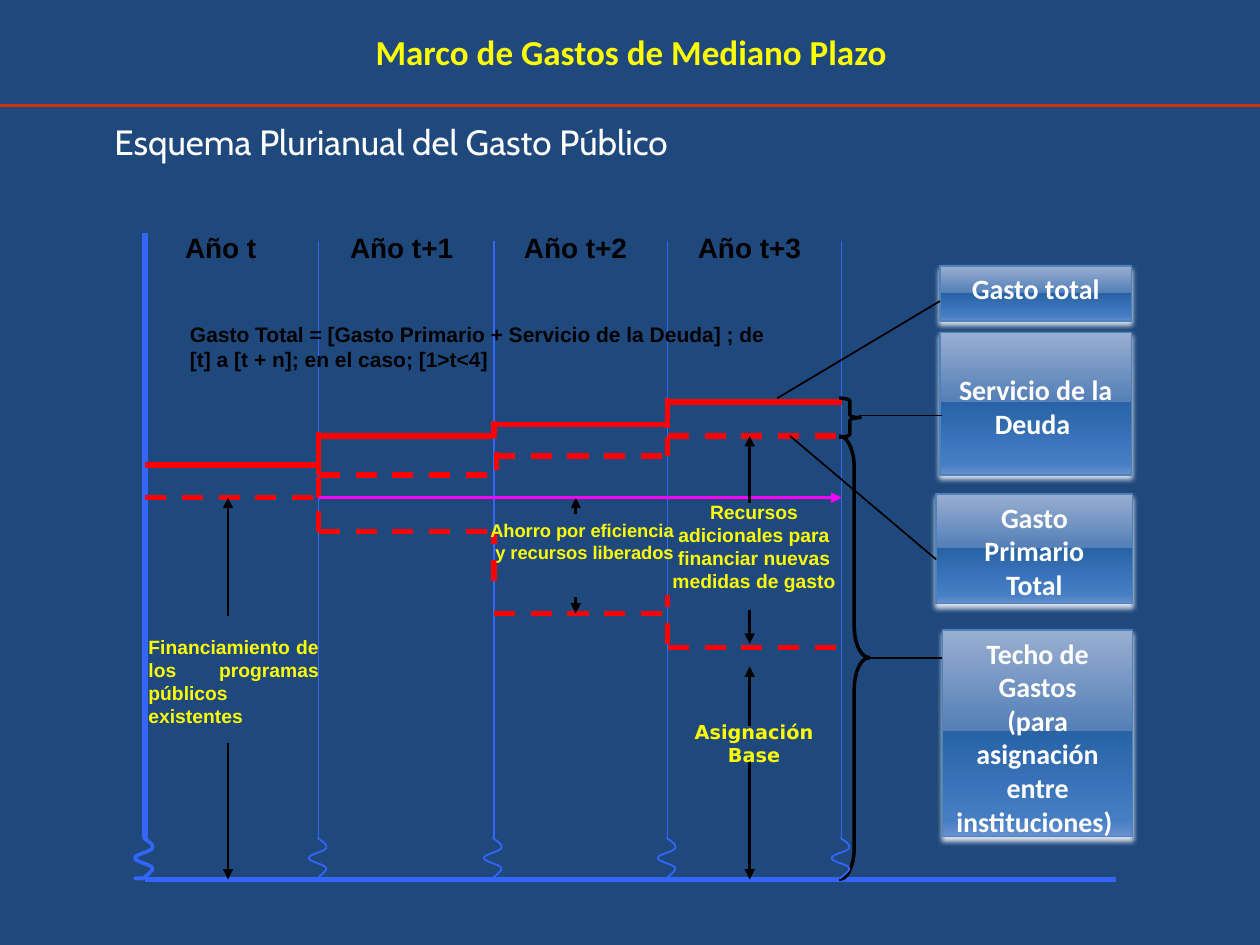
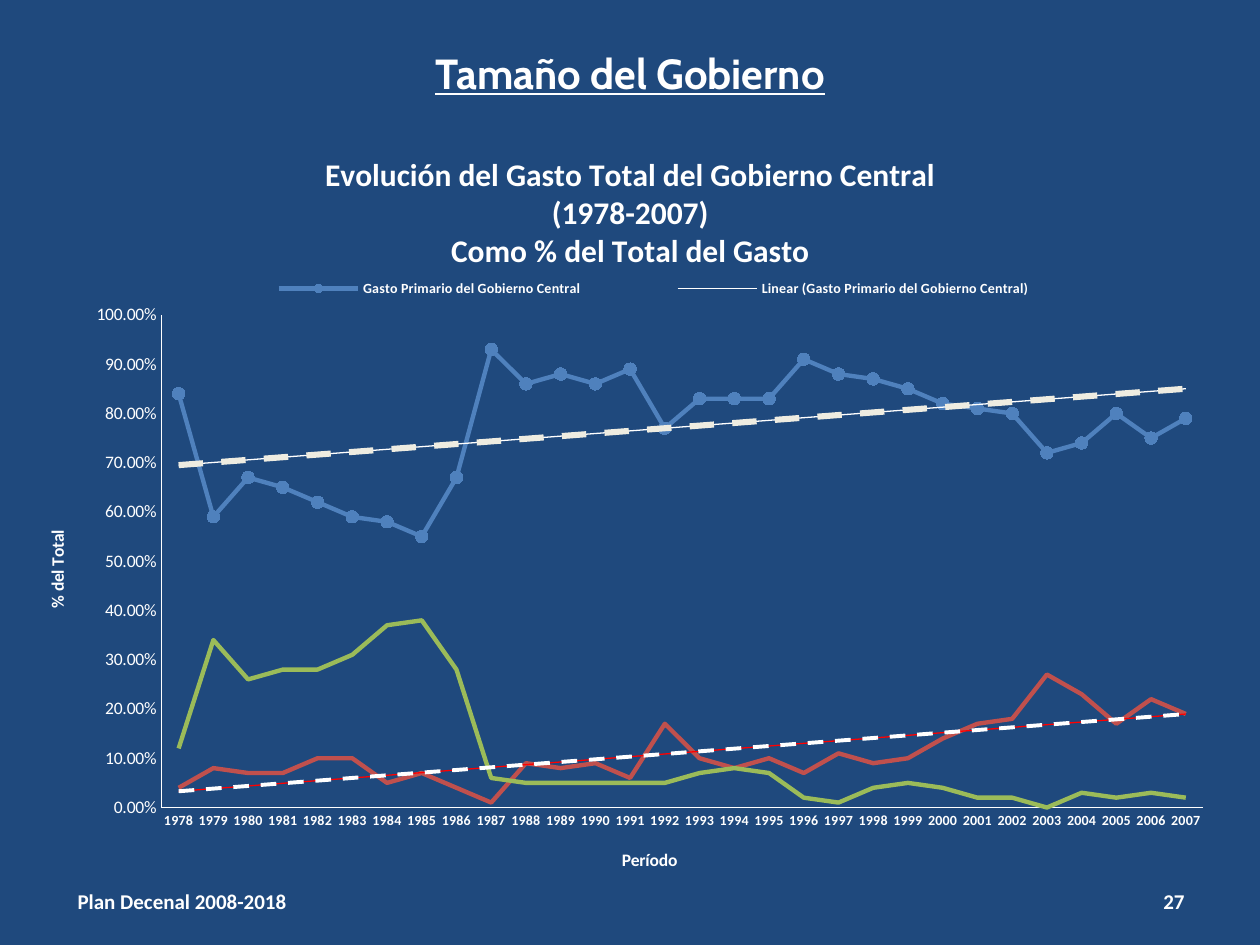
"""Build two slides on multi-year public spending and the size of government."""
from dataclasses import dataclass

from pptx import Presentation
from pptx.chart.data import CategoryChartData
from pptx.dml.color import RGBColor
from pptx.enum.chart import XL_CHART_TYPE as ChartType, XL_LEGEND_POSITION as LegendPosition
from pptx.enum.chart import XL_MARKER_STYLE as Marker, XL_TICK_MARK as TickMark
from pptx.enum.dml import MSO_LINE as Dash
from pptx.enum.shapes import MSO_CONNECTOR as Connector, MSO_SHAPE as Shape
from pptx.enum.text import MSO_ANCHOR as Anchor, PP_ALIGN as Align
from pptx.oxml import parse_xml
from pptx.oxml.ns import nsdecls, qn
from pptx.util import Pt

PX = 9144


@dataclass(frozen=True)
class Theme:
    background: str = "1F497D"
    white: str = "FFFFFF"
    black: str = "000000"
    yellow: str = "FFFF00"
    rule: str = "CC3300"
    frame: str = "3366FF"
    spending: str = "FF0000"
    base_level: str = "FF00FF"
    box_line: str = "4F81BD"
    box_shadow: str = "FFFFFF"
    trend_dash: str = "EEECE1"
    box_gradient: tuple = ((0, "99AED1"), (49, "547FB7"), (49, "2862A7"),
                           (92, "467EC4"), (100, "6690CE"))
    series: tuple = ("4F81BD", "C0504D", "9BBB59")
    body: str = "Calibri"
    display: str = "Cabin"
    diagram: str = "Arial"
    accent: str = "DejaVu Sans"
    heading_size: float = 24
    title_size: float = 20
    chart_title_size: float = 18
    label_size: float = 16
    footer_size: float = 12
    note_size: float = 11
    small_note_size: float = 10.5
    axis_size: float = 10
    tick_size: float = 8


def set_layout(parent, chart_box, x, y, width=None, height=None, inner=False):
    for layout in parent.findall(qn("c:layout")):
        parent.remove(layout)
    left, top, chart_width, chart_height = chart_box
    target = '<c:layoutTarget val="inner"/>' if inner else ""
    size = (f'<c:w val="{width / chart_width}"/><c:h val="{height / chart_height}"/>'
            if width else "")
    layout = parse_xml(
        f'<c:layout {nsdecls("c")}><c:manualLayout>{target}<c:xMode val="edge"/>'
        f'<c:yMode val="edge"/><c:x val="{(x - left) / chart_width}"/>'
        f'<c:y val="{(y - top) / chart_height}"/>{size}</c:manualLayout></c:layout>')
    overlay = parent.find(qn("c:overlay"))
    if overlay is None:
        parent.insert(0, layout)
    else:
        overlay.addprevious(layout)


class Deck:
    def __init__(self, theme):
        self.theme = theme
        self.presentation = Presentation()
        self.presentation.slide_width = 1000 * PX
        self.presentation.slide_height = 750 * PX
        self.slide = None

    def add_slide(self):
        self.slide = self.presentation.slides.add_slide(self.presentation.slide_layouts[6])
        fill = self.slide.background.fill
        fill.solid()
        fill.fore_color.rgb = RGBColor.from_string(self.theme.background)

    def style_font(self, font, size, color=None, name=None, bold=True):
        font.size = Pt(size)
        font.name = name or self.theme.body
        font.bold = bold
        font.color.rgb = RGBColor.from_string(color or self.theme.white)

    def fill_frame(self, frame, text, size, color, name, bold, align):
        frame.word_wrap = True
        frame.text = text
        for paragraph in frame.paragraphs:
            paragraph.alignment = align
            self.style_font(paragraph.font, size, color, name, bold)

    def text(self, box, text, size, color=None, name=None, bold=True,
             align=Align.CENTER, anchor=Anchor.TOP):
        shape = self.slide.shapes.add_textbox(*(value * PX for value in box))
        shape.text_frame.vertical_anchor = anchor
        self.fill_frame(shape.text_frame, text, size, color, name, bold, align)
        return shape

    def title(self, box, text, size, color, name, underline=False):
        shape = self.text(box, text, size, color, name, anchor=Anchor.MIDDLE)
        if underline:
            shape.text_frame.paragraphs[0].font.underline = True

    def line(self, start, end, color, width, dashed=False, arrow=False):
        points = (value * PX for value in (*start, *end))
        connector = self.slide.shapes.add_connector(Connector.STRAIGHT, *points)
        connector.line.color.rgb = RGBColor.from_string(color)
        connector.line.width = Pt(width)
        if dashed:
            connector.line.dash_style = Dash.DASH
        if arrow:
            connector.line._get_or_add_ln().append(
                parse_xml(f'<a:tailEnd {nsdecls("a")} type="triangle"/>'))
        connector._element.spPr.append(parse_xml(f'<a:effectLst {nsdecls("a")}/>'))

    def outline(self, shape, color, width):
        shape.shadow.inherit = False
        shape.fill.background()
        shape.line.color.rgb = RGBColor.from_string(color)
        shape.line.width = Pt(width)

    def label_box(self, box, text, top_inset=5):
        shape = self.slide.shapes.add_shape(Shape.RECTANGLE, *(value * PX for value in box))
        self.outline(shape, self.theme.box_line, 0.9)
        stops = "".join(f'<a:gs pos="{position * 1000}"><a:srgbClr val="{color}"/></a:gs>'
                        for position, color in self.theme.box_gradient)
        properties = shape._element.spPr
        properties.replace(properties.find(qn("a:noFill")), parse_xml(
            f'<a:gradFill {nsdecls("a")} rotWithShape="1"><a:gsLst>{stops}</a:gsLst>'
            '<a:lin ang="5400000" scaled="0"/></a:gradFill>'))
        properties.find(qn("a:effectLst")).append(parse_xml(
            f'<a:outerShdw {nsdecls("a")} blurRad="{Pt(3.1)}" dist="{Pt(2)}" dir="5400000" '
            f'rotWithShape="0"><a:srgbClr val="{self.theme.box_shadow}">'
            '<a:alpha val="83000"/></a:srgbClr></a:outerShdw>'))
        shape.text_frame.vertical_anchor = Anchor.TOP
        shape.text_frame.margin_top = top_inset * PX
        self.fill_frame(shape.text_frame, text, self.theme.label_size, None, None, True,
                        Align.CENTER)

    def brace(self, box, curve):
        shape = self.slide.shapes.add_shape(Shape.RIGHT_BRACE, *(value * PX for value in box))
        shape.adjustments[0] = curve
        self.outline(shape, self.theme.black, 2)

    def axis_break(self, x, y, width):
        offsets = ((4, 3), (8, 5), (7, 8), (6, 11), (-7, 13), (-7, 16),
                   (-7, 19), (6, 21), (7, 24), (8, 26), (2, 30), (0, 32),
                   (-2, 33), (-7, 32), (-7, 32), (-7, 32), (-1, 32), (0, 32))
        builder = self.slide.shapes.build_freeform(x, y, scale=PX)
        builder.add_line_segments([(x + dx, y + dy) for dx, dy in offsets], close=False)
        shape = builder.convert_to_shape()
        segments = list(shape._element.iter(qn("a:lnTo")))
        for first in range(0, len(segments), 3):
            curve = parse_xml(f'<a:cubicBezTo {nsdecls("a")}/>')
            segments[first].addprevious(curve)
            for segment in segments[first:first + 3]:
                curve.append(segment[0])
                segment.getparent().remove(segment)
        self.outline(shape, self.theme.frame, width)

    def trend(self, series, color, width, dash="solid"):
        series._element.find(qn("c:cat")).addprevious(parse_xml(
            f'<c:trendline {nsdecls("c", "a")}><c:spPr><a:ln w="{Pt(width)}"><a:solidFill>'
            f'<a:srgbClr val="{color}"/></a:solidFill><a:prstDash val="{dash}"/></a:ln></c:spPr>'
            '<c:trendlineType val="linear"/><c:dispRSqr val="0"/><c:dispEq val="0"/>'
            '</c:trendline>'))

    def axis(self, axis, title, size, bold, line_width):
        axis.has_major_gridlines = False
        axis.major_tick_mark = axis.minor_tick_mark = TickMark.NONE
        axis.format.line.color.rgb = RGBColor.from_string(self.theme.white)
        axis.format.line.width = Pt(line_width)
        self.style_font(axis.tick_labels.font, size, bold=bold)
        frame = axis.axis_title.text_frame
        frame.text = title
        self.style_font(frame.paragraphs[0].font, self.theme.axis_size)
        return frame

    def line_chart(self, box, title, categories, values, category_title, value_title):
        theme = self.theme
        data = CategoryChartData(number_format="0.00%")
        data.categories = categories
        for name, numbers in values.items():
            data.add_series(name, numbers)
        chart = self.slide.shapes.add_chart(
            ChartType.LINE_MARKERS, *(value * PX for value in box), data).chart
        self.style_font(chart.font, theme.axis_size, theme.black, bold=False)
        chart.plots[0].vary_by_categories = False
        for series, color in zip(chart.series, theme.series):
            series.smooth = False
            series.format.line.color.rgb = RGBColor.from_string(color)
            series.format.line.width = Pt(2.5)
            series.marker.style = Marker.NONE
        primary, debt, _ = chart.series
        marker = primary.marker
        marker.style = Marker.CIRCLE
        marker.size = 7
        marker.format.fill.solid()
        for color in (marker.format.fill.fore_color, marker.format.line.color):
            color.rgb = RGBColor.from_string(theme.series[0])
        self.trend(primary, theme.white, 0.75)
        self.trend(primary, theme.trend_dash, 3.5, "dash")
        self.trend(debt, theme.spending, 0.75)
        self.trend(debt, theme.white, 2.25, "dash")

        frame = chart.chart_title.text_frame
        frame.text = title
        for paragraph in frame.paragraphs:
            paragraph.alignment = Align.CENTER
            self.style_font(paragraph.font, theme.chart_title_size)
        self.axis(chart.category_axis, category_title, theme.tick_size, True, 1)
        frame = self.axis(chart.value_axis, value_title, theme.axis_size, False, 0.75)
        frame._txBody.bodyPr.set("rot", "-5400000")
        frame._txBody.bodyPr.set("vert", "horz")
        chart.value_axis.minimum_scale = 0
        chart.value_axis.maximum_scale = 1
        chart.value_axis.major_unit = 0.1
        chart.value_axis.tick_labels.number_format = "0.00%"
        chart.value_axis.tick_labels.number_format_is_linked = False

        chart.has_legend = True
        chart.legend.position = LegendPosition.TOP
        chart.legend.include_in_layout = False
        self.style_font(chart.legend.font, theme.tick_size)
        legend = chart.legend._element
        set_layout(chart.chart_title._element, box, 255, 119)
        set_layout(chart.category_axis.axis_title._element, box, 491, 671)
        set_layout(chart.value_axis.axis_title._element, box, 34, 418)
        set_layout(legend, box, 187, 218, 664, 22)
        set_layout(chart._chartSpace.chart.plotArea, box, 128, 250, 827, 391, inner=True)
        for index in (1, 2, 4, 5, 6):
            legend.find(qn("c:layout")).addprevious(parse_xml(
                f'<c:legendEntry {nsdecls("c")}><c:idx val="{index}"/>'
                '<c:delete val="1"/></c:legendEntry>'))


def spending_framework(deck):
    theme = deck.theme
    deck.add_slide()
    deck.title((51, 13, 900, 55), "Marco de Gastos de Mediano Plazo",
               theme.title_size, theme.yellow, theme.body)
    deck.line((0, 84), (1000, 84), theme.rule, 1.5)
    deck.text((35, 91, 551, 47), "Esquema Plurianual del Gasto Público",
              theme.title_size, name=theme.display, bold=False)

    year_edges = (115, 253, 392, 530, 668)
    axis_bottom, break_top = 698, 665
    deck.line((115, 185), (115, break_top), theme.frame, 3)
    deck.line((886, axis_bottom), (115, axis_bottom), theme.frame, 3)
    for x in year_edges[1:]:
        deck.line((x, 191), (x, break_top), theme.frame, 0.75)
    for x, year in zip((137, 268, 406, 544), ("Año t", "Año t+1", "Año t+2", "Año t+3")):
        deck.text((x, 178, 102, 46), year, theme.label_size, theme.black,
                  theme.diagram, align=Align.LEFT)

    years = list(zip(year_edges, year_edges[1:]))
    for heights, dashed in (((369, 346, 337, 319), False), ((395, 377, 362, 346), True)):
        for (left, right), y in zip(years, heights):
            deck.line((left, y), (right, y), theme.spending, 3, dashed)
    for (left, right), y in zip(years[1:], (422, 487, 514)):
        deck.line((left, y), (right, y), theme.spending, 3, True)
    for x, start, end, dashed in (
            (253, 343, 377, False), (530, 316, 340, False), (253, 395, 369, True),
            (392, 348, 334, True), (530, 362, 347, True), (253, 422, 395, True),
            (392, 461, 422, True), (530, 511, 472, True), (394, 373, 359, True)):
        deck.line((x, start), (x, end), theme.spending, 3, dashed)
    deck.line((253, 395), (668, 395), theme.base_level, 2, arrow=True)

    deck.label_box((746, 211, 152, 44), "Gasto total")
    deck.label_box((746, 264, 152, 113), "Servicio de la Deuda ", top_inset=32)
    deck.label_box((743, 392, 156, 87), "Gasto Primario\nTotal")
    deck.label_box((748, 500, 151, 164),
                   "Techo de Gastos\v(para asignación entre instituciones) ")
    deck.brace((666, 316, 17, 31), 0.13)
    deck.brace((666, 346, 24, 352), 1.04)
    for start, end, width in (((617, 316), (746, 239), 1), ((682, 330), (748, 330), 0.75),
                              ((690, 522), (748, 522), 1), ((627, 346), (743, 444), 1)):
        deck.line(start, end, theme.black, width)
    for x, start, end in ((181, 489, 395), (181, 590, 698), (457, 408, 395), (457, 474, 487),
                          (595, 576, 529), (595, 605, 698), (595, 399, 346), (595, 484, 511)):
        deck.line((x, start), (x, end), theme.black, 1.5, arrow=True)
    for x in year_edges:
        deck.axis_break(x - 1, break_top, 2 if x == year_edges[0] else 1)

    for box, note, size, name, align in (
            ((108, 499, 155, 107), "Financiamiento de los programas públicos existentes",
             theme.note_size, theme.diagram, Align.JUSTIFY),
            ((378, 407, 168, 64), "Ahorro por eficiencia\n y recursos liberados",
             theme.small_note_size, theme.diagram, Align.CENTER),
            ((522, 567, 153, 46), "Asignación Base",
             theme.note_size, theme.accent, Align.CENTER),
            ((522, 392, 153, 107), "Recursos adicionales para financiar nuevas medidas de gasto",
             theme.note_size, theme.diagram, Align.CENTER)):
        deck.text(box, note, size, theme.yellow, name, align=align)
    deck.text((141, 250, 477, 50), "Gasto Total = [Gasto Primario + Servicio de la Deuda] ; "
              "de [t] a [t + n]; en el caso; [1>t<4]", theme.footer_size, theme.black,
              theme.diagram, align=Align.LEFT)


def government_size(deck):
    theme = deck.theme
    deck.add_slide()
    deck.title((50, 30, 900, 56), "Tamaño del Gobierno", theme.heading_size,
               theme.white, theme.display, underline=True)
    deck.text((47, 695, 195, 40), "Plan Decenal 2008-2018", theme.footer_size,
              anchor=Anchor.MIDDLE)
    deck.text((717, 695, 233, 40), "27", theme.footer_size, align=Align.RIGHT,
              anchor=Anchor.MIDDLE)
    shares = {
        "Gasto Primario del Gobierno Central": (
            0.84, 0.59, 0.67, 0.65, 0.62, 0.59, 0.58, 0.55, 0.67, 0.93,
            0.86, 0.88, 0.86, 0.89, 0.77, 0.83, 0.83, 0.83, 0.91, 0.88,
            0.87, 0.85, 0.82, 0.81, 0.8, 0.72, 0.74, 0.8, 0.75, 0.79),
        "Servicio de la Deuda": (
            0.04, 0.08, 0.07, 0.07, 0.1, 0.1, 0.05, 0.07, 0.04, 0.01,
            0.09, 0.08, 0.09, 0.06, 0.17, 0.1, 0.08, 0.1, 0.07, 0.11,
            0.09, 0.1, 0.14, 0.17, 0.18, 0.27, 0.23, 0.17, 0.22, 0.19),
        "Otros gastos Corrientes y de Capital": (
            0.12, 0.34, 0.26, 0.28, 0.28, 0.31, 0.37, 0.38, 0.28, 0.06,
            0.05, 0.05, 0.05, 0.05, 0.05, 0.07, 0.08, 0.07, 0.02, 0.01,
            0.04, 0.05, 0.04, 0.02, 0.02, 0, 0.03, 0.02, 0.03, 0.02)}
    deck.line_chart((26, 102, 948, 617),
                    "Evolución del Gasto Total del Gobierno Central\n(1978-2007)\n"
                    "Como % del Total del Gasto",
                    [str(year) for year in range(1978, 2008)], shares,
                    "Período", "% del Total")


def main():
    deck = Deck(Theme())
    spending_framework(deck)
    government_size(deck)
    deck.presentation.save("out.pptx")


if __name__ == "__main__":
    main()
